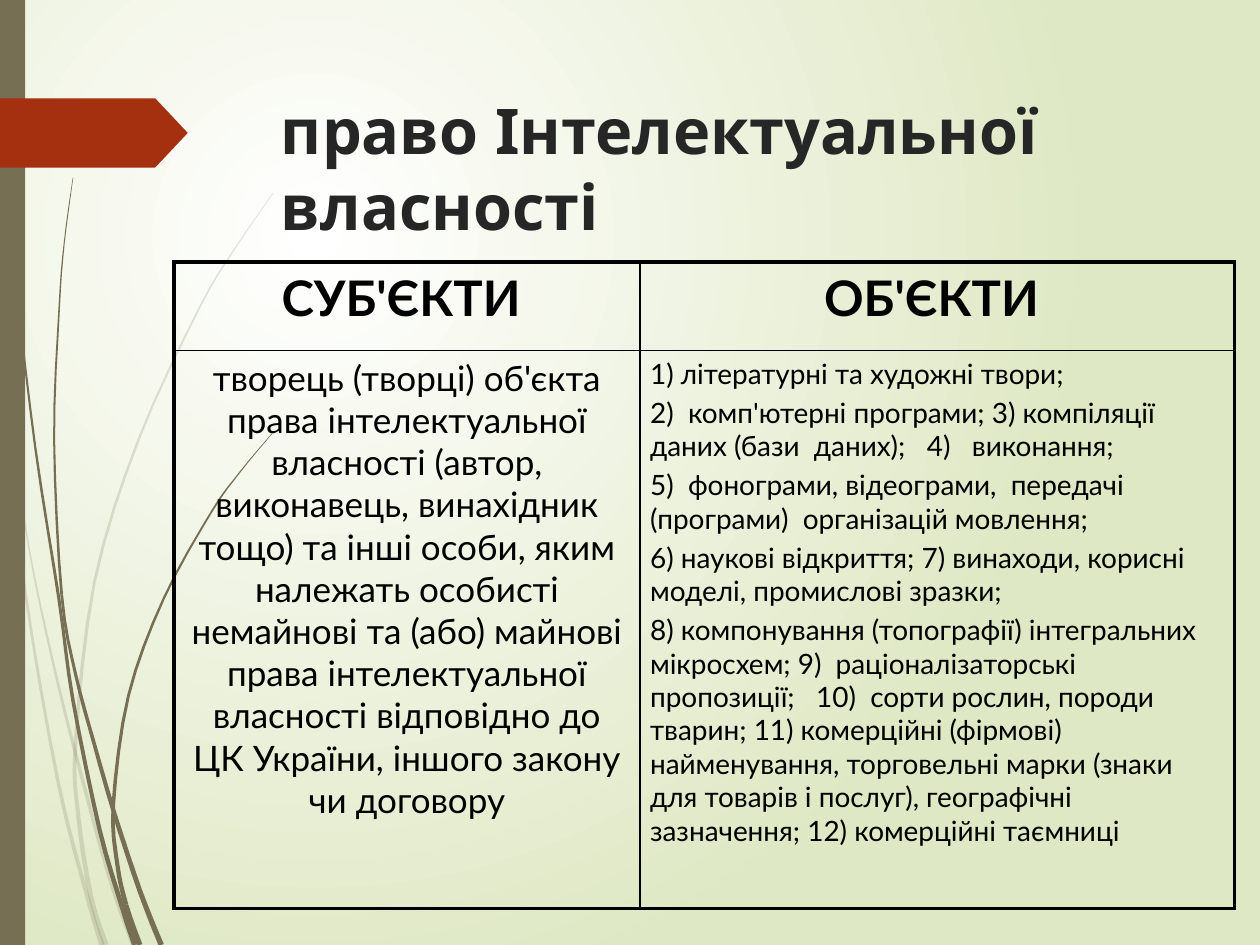
import math
from lxml import etree
from pptx import Presentation, util as u
from pptx.dml import color
from pptx.enum import shapes, text
from pptx.oxml import ns

OLIVE, BRICK, INK = "766F54", "A53010", "000000"
COLUMNS, ROWS = (3.7, 4.72), (0.7, 4.43)
STEPS = 4
PALE_BLADES = [
    [[(0, 2.9), (0.08, 3.5)],
     [(0.2, 4.69), (0.46, 6.2), (0.7, 7.14)],
     [(0.81, 7.5)]],
    [[(0.1, 3.45), (0.23, 4.35), (0.41, 5.21), (0.6, 5.98)],
     [(0.86, 6.93), (1.06, 7.5)]],
    [[(2.17, 1.53), (1.86, 1.98), (1.58, 2.45), (1.1, 3.49), (0.75, 4.62),
      (0.6, 5.9)],
     [(0.62, 6.46), (0.72, 7.11)],
     [(0.84, 7.5)]],
]
DARK_BLADES = [
    [[(0.03, 0), (0.05, 1.1), (0.14, 2.33), (0.28, 3.55), (0.47, 4.77)],
     [(0.58, 5.56), (0.79, 6.58), (0.97, 7.2)],
     [(1.07, 7.5)]],
    [[(0.58, 1.41), (0.51, 1.93), (0.47, 2.45), (0.43, 3.49), (0.49, 4.72)],
     [(0.6, 5.35), (0.75, 5.91), (0.9, 6.43)],
     [(1.11, 7.07), (1.28, 7.5)]],
    [[(2.16, 3.44), (1.91, 3.74), (1.68, 4.06), (1.3, 4.75), (1.02, 5.52),
      (0.9, 6.38)],
     [(0.93, 6.85), (1, 7.18)],
     [(1.11, 7.5)]],
]
SUBJECTS = ("творець (творці) об'єкта права інтелектуальної власності (автор, "
            "виконавець, винахідник тощо) та інші особи, яким належать особисті "
            "немайнові та (або) майнові права інтелектуальної власності відповідно "
            "до ЦК України, іншого закону чи договору")
OBJECTS = [
    "1) літературні та художні твори;",
    "2)  комп'ютерні програми; 3) компіляції даних (бази  даних);   4)   виконання;",
    "5)  фонограми, відеограми,  передачі  (програми)  організацій мовлення;",
    "6) наукові відкриття; 7) винаходи, корисні моделі, промислові зразки;",
    "8) компонування (топографії) інтегральних мікросхем; 9)  раціоналізаторські   "
    "пропозиції;   10)  сорти рослин, породи тварин; 11) комерційні (фірмові) "
    "найменування, торговельні марки (знаки для товарів і послуг), географічні "
    "зазначення; 12) комерційні таємниці",
]


def rgb(value):
    """Turn a hex string into a colour."""
    return color.RGBColor.from_string(value)


def paint(shape, value, alpha=100):
    """Fill a shape plainly, without line or shadow."""
    shape.shadow.inherit = False
    shape.line.fill.background()
    shape.fill.solid()
    shape.fill.fore_color.rgb = rgb(value)
    if alpha < 100:
        tone = shape.element.spPr.find(".//" + ns.qn("a:srgbClr"))
        etree.SubElement(tone, ns.qn("a:alpha"), val=str(alpha * 1000))


def set_background(page):
    """Give the page a radial gradient from white to pale green."""
    fill = page.background.fill
    fill.gradient()
    for stop, value in zip(fill.gradient_stops, ("FFFFFF", "DFE8C4")):
        stop.color.rgb = rgb(value)
    gradient = page.element.find(".//" + ns.qn("a:gradFill"))
    linear = gradient.find(ns.qn("a:lin"))
    circle = etree.Element(ns.qn("a:path"), path="circle")
    etree.SubElement(circle, ns.qn("a:fillToRect"),
                     l="50000", t="50000", r="100000", b="100000")
    gradient.replace(linear, circle)


def smooth_curve(knots):
    """Sample a Catmull-Rom curve through the knots."""
    ends = [knots[0], *knots, knots[-1]]
    curve = []
    for a, b, c, d in zip(ends, ends[1:], ends[2:], ends[3:]):
        for step in range(STEPS):
            t = step / STEPS
            curve.append(tuple(
                (2 * q + (r - p) * t + (2 * p - 5 * q + 4 * r - s) * t ** 2
                 + (3 * q - p - 3 * r + s) * t ** 3) / 2
                for p, q, r, s in zip(a, b, c, d)))
    return curve + [knots[-1]]


def add_blade(page, stretches, alpha):
    """Draw a grass blade, stretch by stretch, widening from tip to root."""
    curve = smooth_curve(sum(stretches, []))
    left, right = [], []
    for i, (x, y) in enumerate(curve):
        before, after = curve[max(i - 1, 0)], curve[min(i + 1, len(curve) - 1)]
        dx, dy = after[0] - before[0], after[1] - before[1]
        half = (0.002 + 0.02 * i / len(curve)) / math.hypot(dx, dy)
        left.append((x - dy * half, y + dx * half))
        right.append((x + dy * half, y - dx * half))
    start, knot_count = 0, 0
    for stretch in stretches:
        knot_count += len(stretch)
        end = (knot_count - 1) * STEPS
        add_outline(page, left[start:end + 1] + right[start:end + 1][::-1], alpha)
        start = end


def add_outline(page, points, alpha):
    """Add a filled outline through points in inches."""
    first, *rest = [(x * 1000, y * 1000) for x, y in points]
    builder = page.shapes.build_freeform(*first, scale=u.Inches(1) / 1000)
    builder.add_line_segments(rest, close=True)
    paint(builder.convert_to_shape(), OLIVE, alpha)


def add_panel(page, kind, *place):
    """Add a preset shape at a place in inches."""
    return page.shapes.add_shape(kind, *map(u.Inches, place))


def style_run(span, font, size, value, bold):
    """Set the font of a run."""
    span.font.name, span.font.size, span.font.bold = font, u.Pt(size), bold
    span.font.color.rgb = rgb(value)


def set_title(page, wording):
    """Place the title in front of the decoration."""
    title = page.shapes.title
    title.left, title.top, title.width, title.height = map(
        u.Inches, (2.13, 0.68, 7.21, 1.4))
    frame = title.text_frame
    frame.text = wording
    frame.word_wrap, frame.auto_size = True, text.MSO_AUTO_SIZE.NONE
    frame.vertical_anchor = text.MSO_ANCHOR.TOP
    para = frame.paragraphs[0]
    para.alignment = text.PP_ALIGN.LEFT
    style_run(para.runs[0], "League Spartan", 36, "262626", True)
    title.element.getparent().append(title.element)


def set_borders(cell, widths):
    """Line the left, right, top and bottom of a cell."""
    props = cell._tc.get_or_add_tcPr()
    for i, (side, width) in enumerate(zip("LRTB", widths)):
        line = etree.Element(ns.qn("a:ln" + side), w=str(u.Pt(width)))
        fill = etree.SubElement(line, ns.qn("a:solidFill"))
        etree.SubElement(fill, ns.qn("a:srgbClr"), val=INK)
        props.insert(i, line)


def fill_cell(cell, lines, size, align, bold):
    """Write paragraphs into an unfilled cell."""
    cell.fill.background()
    cell.margin_left = cell.margin_right = u.Inches(0.08)
    cell.margin_top = cell.margin_bottom = u.Inches(0.05)
    cell.text_frame.text = "\n".join(lines)
    for para in cell.text_frame.paragraphs:
        para.alignment, para.space_before = align, u.Pt(size * 0.2)
        style_run(para.runs[0], "Lato", size, INK, bold)


def add_rights_table(page):
    """Add the table of subjects and objects with a heavy outer frame."""
    frame = page.shapes.add_table(
        2, 2, *map(u.Inches, (1.38, 2.08, sum(COLUMNS), sum(ROWS))))
    table = frame.table
    table.first_row = table.horz_banding = False
    for column, width in zip(table.columns, COLUMNS):
        column.width = u.Inches(width)
    for row, height in zip(table.rows, ROWS):
        row.height = u.Inches(height)
    center, left = text.PP_ALIGN.CENTER, text.PP_ALIGN.LEFT
    contents = [
        [(["СУБ'ЄКТИ "], 28, center, True), (["ОБ'ЄКТИ "], 28, center, True)],
        [([SUBJECTS], 20, center, False), (OBJECTS, 16, left, False)],
    ]
    for r, row in enumerate(contents):
        for c, content in enumerate(row):
            cell = table.cell(r, c)
            fill_cell(cell, *content)
            outer = (c == 0, c == 1, r == 0, r == 1)
            set_borders(cell, [2.25 if edge else 1 for edge in outer])


def main():
    """Build and save the deck."""
    deck = Presentation()
    deck.slide_width, deck.slide_height = u.Inches(10), u.Inches(7.5)
    page = deck.slides.add_slide(deck.slide_layouts[5])
    set_background(page)
    for blades, alpha in ((PALE_BLADES, 20), (DARK_BLADES, 100)):
        for stretches in blades:
            add_blade(page, stretches, alpha)
    paint(add_panel(page, shapes.MSO_SHAPE.RECTANGLE, 0, 0, 0.2, 7.5), OLIVE)
    marker = add_panel(page, shapes.MSO_SHAPE.PENTAGON, 0, 0.78, 1.49, 0.55)
    marker.adjustments[0] = 0.47
    paint(marker, BRICK)
    set_title(page, "право Інтелектуальної власності")
    add_rights_table(page)
    deck.save("out.pptx")


if __name__ == "__main__":
    main()
